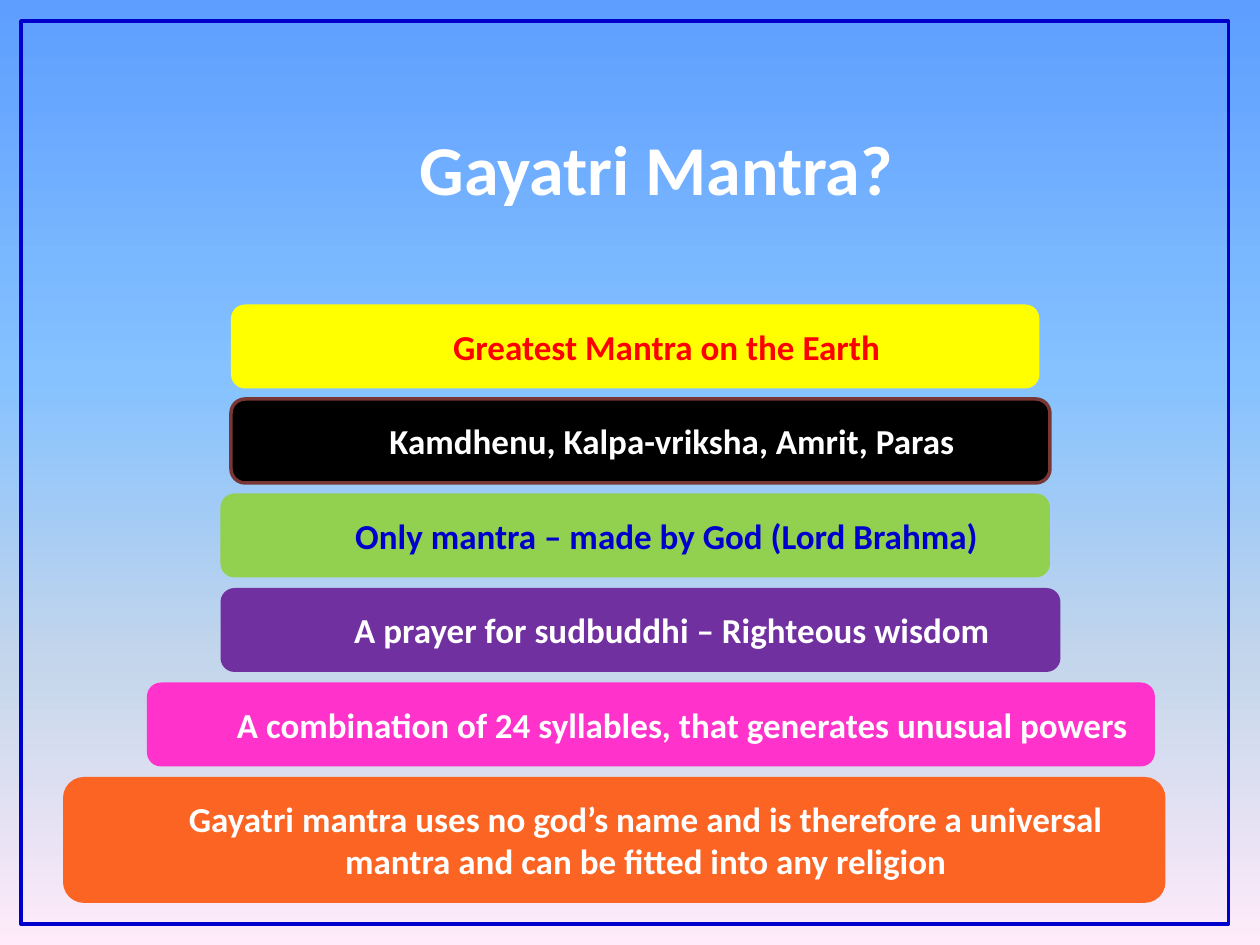
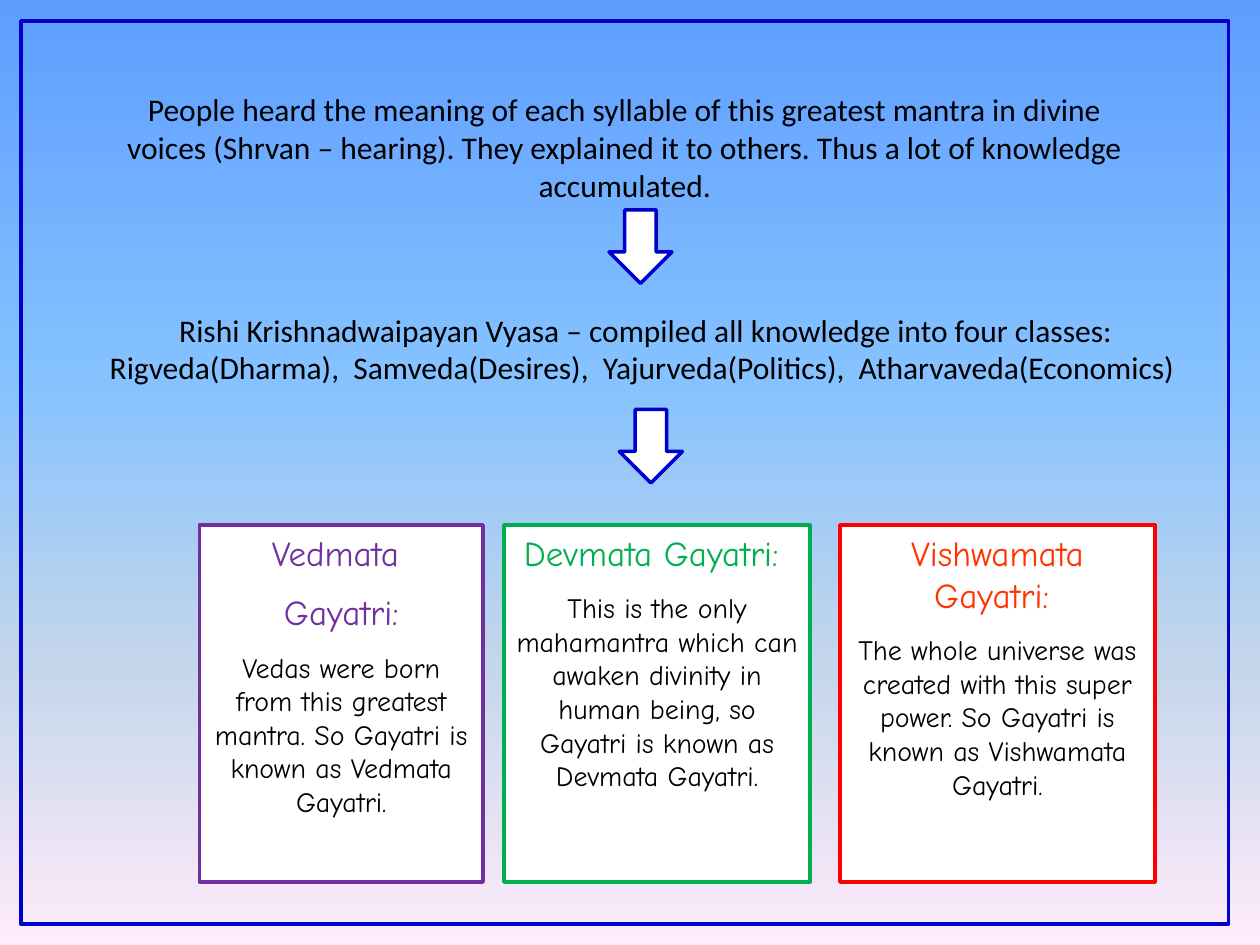
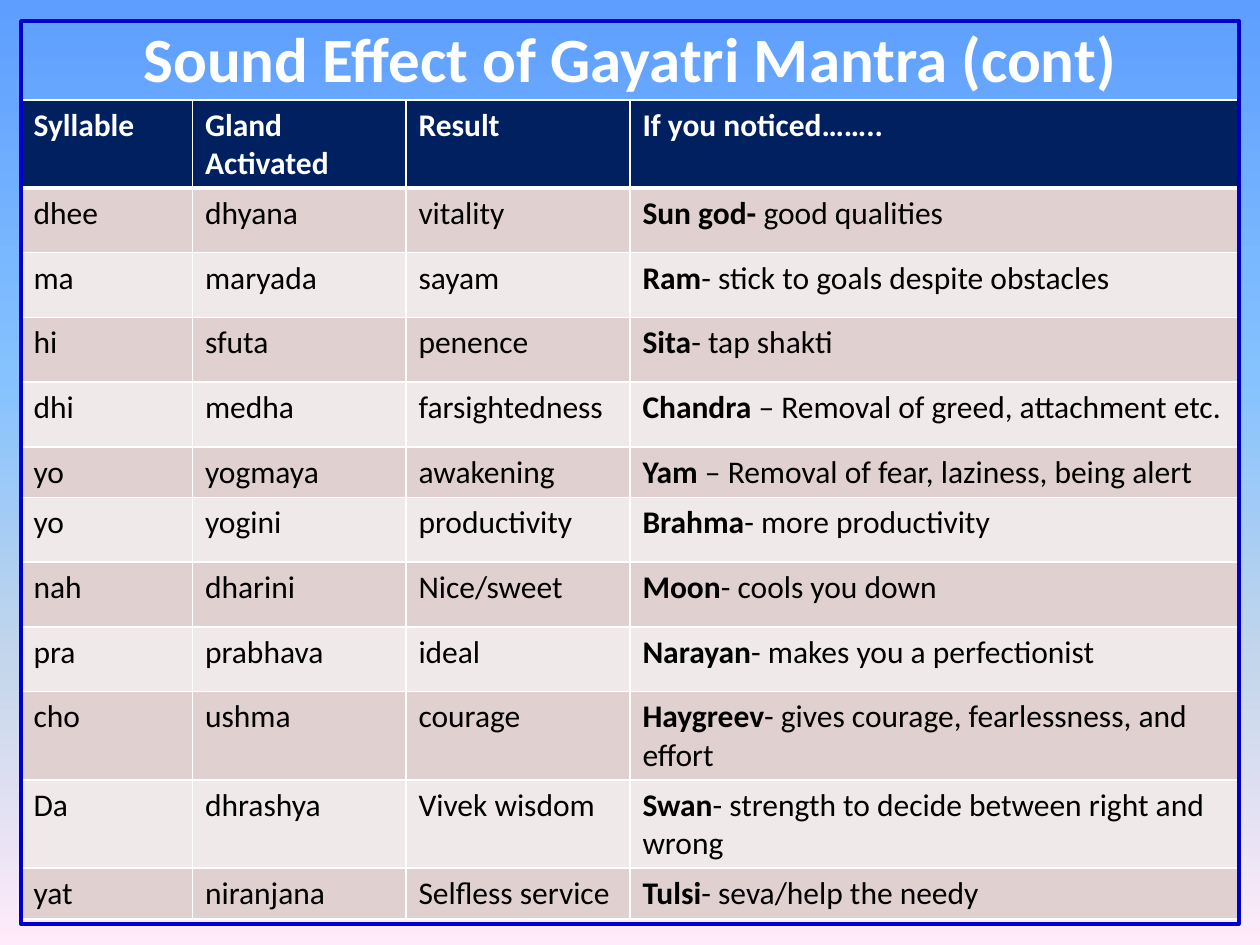
from dataclasses import dataclass

from lxml import etree
from pptx import Presentation
from pptx import util as u
from pptx.dml import color
from pptx.enum import shapes, text
from pptx.oxml import ns

BOOK_TITLE = "Gayatri Mantra?"
CLAIMS = [
    ("Greatest Mantra on the Earth", 132, 462, 48, "yellow", "red", None),
    ("Kamdhenu, Kalpa-vriksha, Amrit, Paras", 132, 468, 48, "black", "white", "maroon"),
    ("Only mantra – made by God (Lord Brahma)", 126, 474, 48, "lime", "blue", None),
    ("A prayer for sudbuddhi – Righteous wisdom", 126, 480, 48, "purple", "white", None),
    ("A combination of 24 syllables, that generates unusual powers",
     84, 576, 48, "pink", "white", None),
    ("Gayatri mantra uses no god’s name and is therefore a universal mantra "
     "and can be fitted into any religion", 36, 630, 72, "orange", "white", None),
]

HISTORY = [
    ("People heard the meaning of each syllable of this greatest mantra in divine voices "
     "(Shrvan – hearing). They explained it to others. Thus a lot of knowledge accumulated.",
     (60, 48, 594, 94), (348, 120, 36, 42)),
    ("Rishi Krishnadwaipayan Vyasa – compiled all knowledge into four classes: "
     "Rigveda(Dharma),  Samveda(Desires),  Yajurveda(Politics),  Atharvaveda(Economics) ",
     (36, 174, 666, 73), (354, 234, 36, 42)),
]
ASPECTS = [
    (["Vedmata ", "Gayatri:"],
     "Vedas were born from this greatest mantra. So Gayatri is known as Vedmata Gayatri.",
     114, 162, "purple", "purple"),
    (["Devmata Gayatri: "],
     "This is the only mahamantra which can awaken divinity in human being, "
     "so Gayatri is known as Devmata Gayatri.",
     288, 175, "green", "green"),
    (["Vishwamata Gayatri: "],
     "The whole universe was created with this super power. "
     "So Gayatri is known as Vishwamata Gayatri.",
     480, 180, "red", "vermilion"),
]

SOUND_TITLE = "Sound Effect of Gayatri Mantra (cont)"
SOUND_HEADER = ["Syllable", "Gland Activated", "Result", "If you noticed…….."]
SOUND_EFFECTS = [
    ("dhee", "dhyana", "vitality", "Sun god- ", "good qualities"),
    ("ma", "maryada", "sayam", "Ram", "- stick to goals despite obstacles"),
    ("hi", "sfuta", "penence", "Sita", "- tap shakti"),
    ("dhi", "medha", "farsightedness", "Chandra", " – Removal of greed, attachment etc."),
    ("yo", "yogmaya", "awakening", "Yam", " – Removal of fear, laziness, being alert"),
    ("yo", "yogini", "productivity", "Brahma", "- more productivity"),
    ("nah", "dharini", "Nice/sweet", "Moon", "- cools you down"),
    ("pra", "prabhava", "ideal", "Narayan", "- makes you a perfectionist"),
    ("cho", "ushma", "courage", "Haygreev", "- gives courage, fearlessness, and effort"),
    ("Da", "dhrashya", "Vivek wisdom", "Swan", "- strength to decide between right and wrong"),
    ("yat", "niranjana", "Selfless service", "Tulsi", "- seva/help the needy"),
]
SOUND_COLUMNS = [98, 122, 128, 348]
SOUND_ROWS = [36] + [37] * 4 + [28] + [37] * 5 + [29]


@dataclass(frozen=True)
class Theme:
    colours: dict
    sky: tuple
    fonts: dict
    line: float = 2


THEME = Theme(
    colours=dict(
        white="FFFFFF", black="000000", yellow="FFFF00", red="FF0000", maroon="783735",
        lime="92D050", blue="0000CC", purple="7030A0", pink="FF33CC", orange="FC6424",
        green="00B050", vermilion="FF3300", navy="002060", rose="E0D0CF", pale="F0E9E9"),
    sky=((0, "5E9EFF"), (40, "85C2FF"), (70, "C4D6EB"), (100, "FFEBFA")),
    fonts=dict(
        cover=dict(name="Calibri", size=u.Pt(40), bold=True),
        title=dict(name="Calibri", size=u.Pt(36), bold=True),
        claim=dict(name="Calibri", size=u.Pt(20), bold=True),
        body=dict(name="Calibri", size=u.Pt(18), bold=False),
        strong=dict(name="Calibri", size=u.Pt(18), bold=True),
        aspect=dict(name="Comic Neue", size=u.Pt(20), bold=False),
        detail=dict(name="Comic Neue", size=u.Pt(16), bold=False)),
)
CENTRED = dict(alignment=text.PP_ALIGN.CENTER)
INDENTED = dict(CENTRED, level=1)
SPACED = dict(CENTRED, space_after=u.Pt(10))
LEFT = dict(alignment=text.PP_ALIGN.LEFT)
TOP = text.MSO_ANCHOR.TOP
MIDDLE = text.MSO_ANCHOR.MIDDLE


def apply(target, values):
    for key, value in values.items():
        setattr(target, key, value)


def rgb(name):
    return color.RGBColor.from_string(THEME.colours[name])


def points(*lengths):
    return [u.Pt(length) for length in lengths]


def write(frame, paragraphs, layout):
    for index, runs in enumerate(paragraphs):
        paragraph = frame.add_paragraph() if index else frame.paragraphs[0]
        apply(paragraph, layout)
        if paragraph.level:
            margins = paragraph._p.get_or_add_pPr()
            margins.set("marL", str(u.Pt(36)))
            margins.set("indent", "0")
        for words, font, ink in runs:
            run = paragraph.add_run()
            run.text = words
            apply(run.font, THEME.fonts[font])
            run.font.color.rgb = rgb(ink)


def add_box(slide, kind, place, fill=None, line=None, paragraphs=(), layout=CENTRED, anchor=MIDDLE):
    box = slide.shapes.add_shape(kind, *points(*place))
    box.shadow.inherit = False
    if fill:
        box.fill.solid()
        box.fill.fore_color.rgb = rgb(fill)
    else:
        box.fill.background()
    if line:
        box.line.color.rgb = rgb(line)
        box.line.width = u.Pt(THEME.line)
    else:
        box.line.fill.background()
    apply(box.text_frame, dict(word_wrap=True, vertical_anchor=anchor))
    write(box.text_frame, paragraphs, layout)


def add_words(slide, place, words, font, ink, anchor):
    frame = slide.shapes.add_textbox(*points(*place)).text_frame
    apply(frame, dict(word_wrap=True, vertical_anchor=anchor))
    write(frame, [[(words, font, ink)]], CENTRED)


def add_frame(slide, width=690):
    add_box(slide, shapes.MSO_SHAPE.RECTANGLE, (12, 12, width, 516), line="blue")


def paint_sky(master):
    fill = master.background.fill
    fill.gradient()
    fill.gradient_angle = 270
    stops = next(master.element.iter(ns.qn("a:gsLst")))
    for stop in list(stops):
        stops.remove(stop)
    for percent, tone in THEME.sky:
        stop = etree.SubElement(stops, ns.qn("a:gs"), pos=str(percent * 1000))
        etree.SubElement(stop, ns.qn("a:srgbClr"), val=tone)


def fill_cell(cell, runs, fill, top, bottom):
    properties = cell._tc.get_or_add_tcPr()
    for side, width in dict(lnL=1, lnR=1, lnT=top, lnB=bottom).items():
        edge = etree.SubElement(properties, ns.qn("a:" + side), w=str(u.Pt(width)))
        ink = etree.SubElement(edge, ns.qn("a:solidFill"))
        etree.SubElement(ink, ns.qn("a:srgbClr"), val=THEME.colours["white"])
    cell.fill.solid()
    cell.fill.fore_color.rgb = rgb(fill)
    write(cell.text_frame, [runs], LEFT)


def build_claims(slide):
    rounded = shapes.MSO_SHAPE.ROUNDED_RECTANGLE
    for step, (claim, left, width, height, fill, ink, line) in enumerate(CLAIMS):
        add_box(slide, rounded, (left, 174 + 54 * step, width, height), fill, line,
                [[(claim, "claim", ink)]], INDENTED)
    add_frame(slide)
    add_box(slide, rounded, (126, 72, 462, 48),
            paragraphs=[[(BOOK_TITLE, "cover", "white")]], layout=INDENTED)


def build_history(slide):
    for event, place, arrow in HISTORY:
        add_words(slide, place, event, "body", "black", TOP)
        add_box(slide, shapes.MSO_SHAPE.DOWN_ARROW, arrow, "white", "blue")
    for names, meaning, left, width, line, ink in ASPECTS:
        paragraphs = [[(name, "aspect", ink)] for name in names]
        paragraphs.append([(meaning, "detail", "black")])
        add_box(slide, shapes.MSO_SHAPE.RECTANGLE, (left, 300, width, 204), "white", line,
                paragraphs, SPACED, TOP)
    add_frame(slide)


def build_sounds(slide):
    add_words(slide, (36, 12, 648, 42), SOUND_TITLE, "title", "white", MIDDLE)
    place = points(12, 57, sum(SOUND_COLUMNS), sum(SOUND_ROWS))
    sounds = slide.shapes.add_table(len(SOUND_ROWS), len(SOUND_COLUMNS), *place).table
    sounds.horz_banding = False
    for column, width in zip(sounds.columns, SOUND_COLUMNS):
        column.width = u.Pt(width)
    for row, height in zip(sounds.rows, SOUND_ROWS):
        row.height = u.Pt(height)
    for column, heading in enumerate(SOUND_HEADER):
        fill_cell(sounds.cell(0, column), [(heading, "strong", "white")], "navy", 1, 3)
    for row, (*facts, deity, gift) in enumerate(SOUND_EFFECTS, 1):
        entries = [[(fact, "body", "black")] for fact in facts]
        entries.append([(deity, "strong", "black"), (gift, "body", "black")])
        for column, runs in enumerate(entries):
            fill_cell(sounds.cell(row, column), runs, "rose" if row % 2 else "pale",
                      3 if row == 1 else 1, 1)
    add_frame(slide, 696)


def main():
    deck = Presentation()
    apply(deck, dict(slide_width=u.Pt(720), slide_height=u.Pt(540)))
    paint_sky(deck.slide_master)
    for build in (build_claims, build_history, build_sounds):
        build(deck.slides.add_slide(deck.slide_layouts[6]))
    deck.save("out.pptx")


if __name__ == "__main__":
    main()
